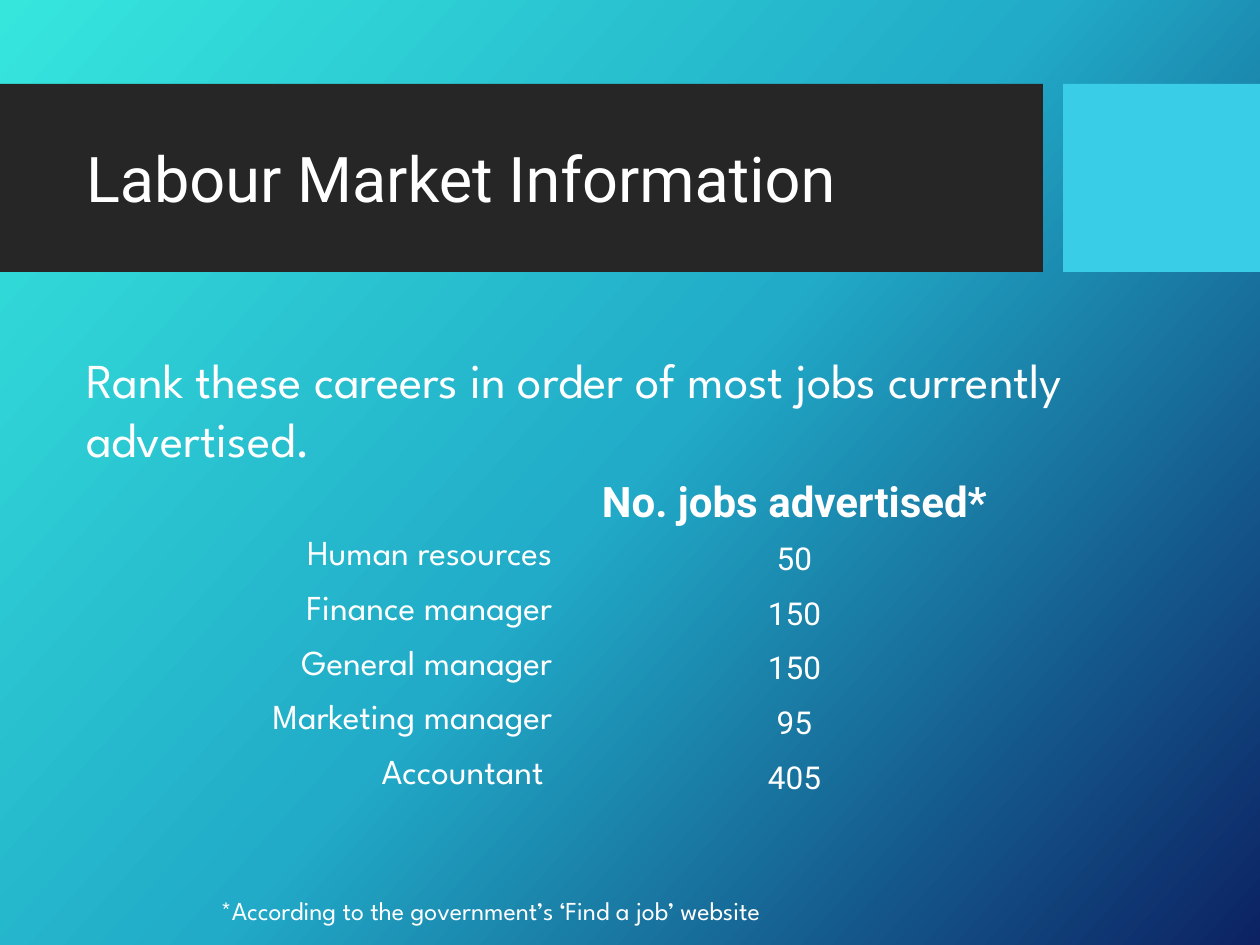
from copy import deepcopy
from dataclasses import dataclass

from pptx import Presentation
from pptx.dml.color import RGBColor
from pptx.enum.shapes import MSO_SHAPE
from pptx.enum.text import MSO_ANCHOR, PP_ALIGN
from pptx.oxml.ns import qn
from pptx.util import Pt

RECTANGLE = MSO_SHAPE.RECTANGLE
TOP, MIDDLE = MSO_ANCHOR.TOP, MSO_ANCHOR.MIDDLE
LEFT, CENTER, RIGHT = PP_ALIGN.LEFT, PP_ALIGN.CENTER, PP_ALIGN.RIGHT
NO_GRID_STYLE = "{2D5ABB26-0587-4C30-8999-92F81FD0307C}"
EMU_PER_INCH, PX_PER_INCH = 914400, 126
HEADER = "No. jobs advertised*"
JOBS = [
    ("Human resources", 50),
    ("Finance manager", 150),
    ("General manager", 150),
    ("Marketing manager", 95),
    ("Accountant ", 405),
]


@dataclass(frozen=True)
class Theme:
    gradient: tuple = ((0, "36E6DD"), (0.5, "21ABC8"), (1, "0C2263"))
    gradient_angle: int = 318
    band: str = "262626"
    accent: str = "39CDE7"
    text: str = "FFFFFF"
    heading_font: str = "Roboto"
    body_font: str = "League Spartan"
    title_size: float = 36
    prompt_size: float = 27.8
    header_size: float = 24
    label_size: float = 20
    value_size: float = 18
    note_size: float = 14.8


def px(length):
    return round(length * EMU_PER_INCH / PX_PER_INCH)


class SlideBuilder:
    def __init__(self, slide, theme):
        self.slide = slide
        self.theme = theme

    def background(self):
        fill = self.slide.background.fill
        fill.gradient()
        fill.gradient_angle = self.theme.gradient_angle
        stop_list = next(self.slide.element.iter(qn("a:gsLst")))
        stop_list.append(deepcopy(stop_list[0]))
        for stop, (position, color) in zip(fill.gradient_stops, self.theme.gradient):
            stop.position = position
            stop.color.rgb = RGBColor.from_string(color)

    def rectangle(self, box, color):
        shape = self.slide.shapes.add_shape(RECTANGLE, *map(px, box))
        shape.shadow.inherit = False
        shape.fill.solid()
        shape.fill.fore_color.rgb = RGBColor.from_string(color)
        shape.line.fill.background()

    def styled_run(self, frame, text, font, size, alignment=LEFT, bold=False):
        paragraph = frame.paragraphs[0]
        paragraph.alignment = alignment
        run = paragraph.add_run()
        run.text = text
        for name, value in {"name": font, "size": Pt(size), "bold": bold}.items():
            setattr(run.font, name, value)
        run.font.color.rgb = RGBColor.from_string(self.theme.text)

    def text(self, box, text, font, size, anchor=TOP):
        frame = self.slide.shapes.add_textbox(*map(px, box)).text_frame
        frame_format = {
            "word_wrap": True,
            "vertical_anchor": anchor,
            "margin_left": 0,
            "margin_right": 0,
            "margin_top": 0,
            "margin_bottom": 0,
        }
        for name, value in frame_format.items():
            setattr(frame, name, value)
        self.styled_run(frame, text, font, size)

    def jobs_table(self, box, header_height, row_height):
        theme = self.theme
        table_frame = self.slide.shapes.add_table(len(JOBS) + 1, 2, *map(px, box))
        table = table_frame.table
        next(table_frame.element.iter(qn("a:tableStyleId"))).text = NO_GRID_STYLE
        for name in ("first_row", "horz_banding"):
            setattr(table, name, False)
        for row in table.rows:
            row.height = px(row_height)
        table.rows[0].height = px(header_height)
        for cell in table.iter_cells():
            cell.fill.background()
        self.styled_run(table.cell(0, 1).text_frame, HEADER,
                        theme.heading_font, theme.header_size, CENTER, True)
        for row, (career, count) in enumerate(JOBS, 1):
            self.styled_run(table.cell(row, 0).text_frame, career,
                            theme.body_font, theme.label_size, RIGHT)
            self.styled_run(table.cell(row, 1).text_frame, str(count),
                            theme.heading_font, theme.value_size, CENTER)


def main():
    presentation = Presentation()
    presentation.slide_width, presentation.slide_height = px(1260), px(945)
    theme = Theme()
    builder = SlideBuilder(
        presentation.slides.add_slide(presentation.slide_layouts[6]), theme)
    builder.background()
    builder.rectangle((0, 84, 1043, 188), theme.band)
    builder.rectangle((1063, 84, 197, 188), theme.accent)
    builder.text((86, 103, 925, 149), "Labour Market Information",
                 theme.heading_font, theme.title_size, MIDDLE)
    builder.text((86, 350, 1055, 100),
                 "Rank these careers in order of most jobs currently advertised.",
                 theme.body_font, theme.prompt_size)
    builder.jobs_table((106, 472, 918, 317), 62, 51)
    builder.text((221, 895, 700, 30),
                 "*According to the government’s ‘Find a job’ website",
                 theme.body_font, theme.note_size)
    presentation.save("out.pptx")


if __name__ == "__main__":
    main()
